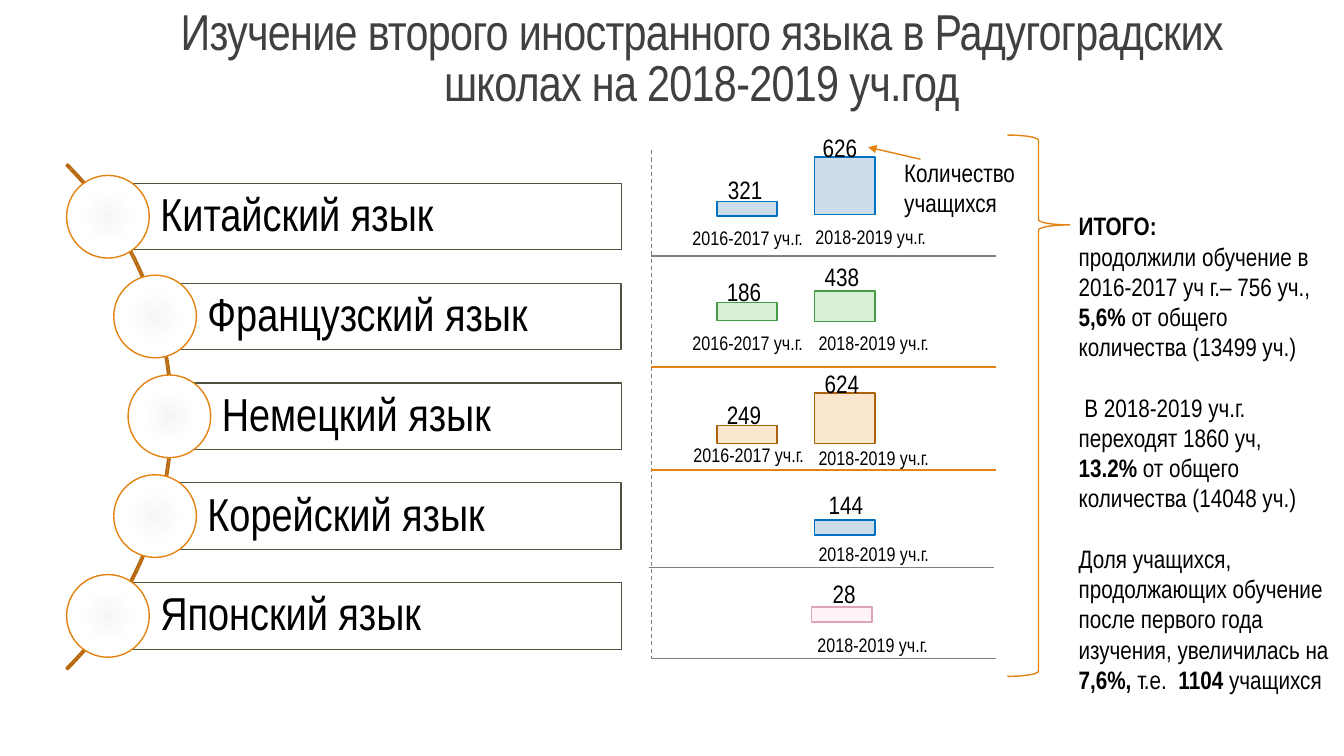
from math import sqrt

from lxml import etree
from pptx import Presentation
from pptx.dml.color import RGBColor
from pptx.enum.dml import MSO_LINE
from pptx.enum.shapes import MSO_CONNECTOR, MSO_SHAPE
from pptx.enum.text import MSO_ANCHOR, PP_ALIGN
from pptx.oxml.ns import qn
from pptx.util import Inches, Pt

RECT, OVAL = MSO_SHAPE.RECTANGLE, MSO_SHAPE.OVAL
ARC, BRACE = MSO_SHAPE.BLOCK_ARC, MSO_SHAPE.RIGHT_BRACE
STRAIGHT, DASH = MSO_CONNECTOR.STRAIGHT, MSO_LINE.DASH
TOP, MIDDLE, BOTTOM = MSO_ANCHOR.TOP, MSO_ANCHOR.MIDDLE, MSO_ANCHOR.BOTTOM
LEFT, CENTER = PP_ALIGN.LEFT, PP_ALIGN.CENTER

FONT = "Arial Narrow"
BLACK = RGBColor(0x00, 0x00, 0x00)
WHITE = RGBColor(0xFF, 0xFF, 0xFF)
TITLE_GRAY = RGBColor(0x40, 0x40, 0x40)
RULE_GRAY = RGBColor(0x80, 0x80, 0x80)
OLIVE = RGBColor(0x4A, 0x54, 0x3E)
ORANGE = RGBColor(0xE4, 0x83, 0x12)
BROWN = RGBColor(0xB7, 0x69, 0x0E)
BLUE_BAR = RGBColor(0xCC, 0xDD, 0xEA), RGBColor(0x00, 0x70, 0xC0)
GREEN_BAR = RGBColor(0xD7, 0xF0, 0xD4), RGBColor(0x43, 0x9B, 0x45)
ORANGE_BAR = RGBColor(0xFB, 0xE6, 0xCE), RGBColor(0xAB, 0x62, 0x0D)
PINK_BAR = RGBColor(0xFF, 0xF3, 0xF7), RGBColor(0xDE, 0xA6, 0xB2)
BUBBLE_STOPS = (0, "F6F6F6"), (45, "FEFEFE"), (100, "FFFFFF")

LANGUAGES = ["Китайский язык", "Французский язык", "Немецкий язык",
             "Корейский язык", "Японский язык"]
MID_Y, ROW_PITCH = 4.13, 0.99
ARC_X, ARC_R, BUBBLE_R = -1.84, 3.52, 0.41
ROW_RIGHT, ROW_H = 6.16, 0.66

FIRST_YEAR, SECOND_YEAR = "2016-2017 уч.г.", "2018-2019 уч.г."
BAR_W = 0.6
CHART_LEFT, CHART_RIGHT = 6.46, 9.88
# year, colours, bar (left, base, height), value, value place, year place
BARS = [
    (FIRST_YEAR, BLUE_BAR, (7.11, 2.14, 0.14), "321", (7.12, 1.68), (6.77, 2.19)),
    (SECOND_YEAR, BLUE_BAR, (8.08, 2.13, 0.57), "626", (8.06, 1.26), (7.99, 2.18)),
    (FIRST_YEAR, GREEN_BAR, (7.11, 3.18, 0.18), "186", (7.11, 2.69), (6.77, 3.23)),
    (SECOND_YEAR, GREEN_BAR, (8.08, 3.19, 0.3), "438", (8.08, 2.54), (8.02, 3.23)),
    (FIRST_YEAR, ORANGE_BAR, (7.11, 4.4, 0.18), "249", (7.11, 3.91), (6.78, 4.34)),
    (SECOND_YEAR, ORANGE_BAR, (8.08, 4.4, 0.5), "624", (8.08, 3.61), (8.02, 4.37)),
    (SECOND_YEAR, BLUE_BAR, (8.08, 5.31, 0.15), "144", (8.12, 4.81), (8.02, 5.33)),
    (SECOND_YEAR, PINK_BAR, (8.05, 6.17, 0.15), "28", (8.16, 5.69), (8.01, 6.23)),
]
# height, shift, colour, width
RULES = [(2.54, 0, RULE_GRAY, 0.75), (3.64, 0, ORANGE, 1),
         (4.66, 0, ORANGE, 1.5), (5.63, -0.02, RULE_GRAY, 0.75),
         (6.53, 0, RULE_GRAY, 0.75)]

# space before, runs (text, bold)
SUMMARY = [
    (0, [("ИТОГО:", True)]),
    (0, [("продолжили обучение в 2016-2017 уч г.– 756 уч.,", False)]),
    (0, [("5,6% ", True), ("от общего количества (13499 уч.)", False)]),
    (21.6, [(" В 2018-2019 уч.г. переходят 1860 уч,", False)]),
    (0, [("13.2%", True), (" от общего количества (14048 уч.)", False)]),
    (21.6, [("Доля учащихся, продолжающих обучение после первого года "
             "изучения, увеличилась на ", False), ("7,6%, ", True),
            ("т.е.  ", False), ("1104 ", True), ("учащихся", False)]),
]


def write(p, text, size=18, color=BLACK, bold=False, align=LEFT,
          line_spacing=None, tracking=None):
    p.alignment = align
    if line_spacing:
        p.line_spacing = line_spacing
    r = p.add_run()
    r.text = text
    r.font.name, r.font.size, r.font.bold = FONT, Pt(size), bold
    r.font.color.rgb = color
    if tracking:
        r.font._element.set("spc", str(tracking))


def add_box(s, x, y, w, h, wrap=True, anchor=TOP):
    tf = s.shapes.add_textbox(*map(Inches, (x, y, w, h))).text_frame
    tf.word_wrap, tf.vertical_anchor = wrap, anchor
    return tf


def add_label(s, text, x, y, w, h, wrap=False, anchor=TOP, **style):
    tf = add_box(s, x, y, w, h, wrap, anchor)
    write(tf.paragraphs[0], text, **style)


def add_shape(s, kind, x, y, w, h, line, width=1.0, fill=None, adjust=()):
    sp = s.shapes.add_shape(kind, *map(Inches, (x, y, w, h)))
    sp.shadow.inherit = False
    sp.line.color.rgb, sp.line.width = line, Pt(width)
    if fill is None:
        sp.fill.background()
    else:
        sp.fill.solid()
        sp.fill.fore_color.rgb = fill
    for i, value in enumerate(adjust):
        sp.adjustments[i] = value
    return sp


def add_line(s, x1, y1, x2, y2, color, width=1.0, dash=None, arrow=False):
    c = s.shapes.add_connector(STRAIGHT, *map(Inches, (x1, y1, x2, y2)))
    c.line.color.rgb, c.line.width = color, Pt(width)
    if dash:
        c.line.dash_style = dash
    if arrow:
        etree.SubElement(c.line._get_or_add_ln(), qn("a:tailEnd"), type="triangle")
    etree.SubElement(c._element.spPr, qn("a:effectLst"))


def fill_radial(sp, stops):
    sp.fill.gradient()
    grad = sp._element.spPr.find(qn("a:gradFill"))
    for child in list(grad):
        grad.remove(child)
    gs_list = etree.SubElement(grad, qn("a:gsLst"))
    for position, color in stops:
        gs = etree.SubElement(gs_list, qn("a:gs"), pos=str(position * 1000))
        etree.SubElement(gs, qn("a:srgbClr"), val=color)
    shade = etree.SubElement(grad, qn("a:path"))
    shade.set("path", "circle")
    etree.SubElement(shade, qn("a:fillToRect"), {side: "50000" for side in "ltrb"})


def add_language(s, name, offset):
    """Place a named row with its bubble, offset in inches from the middle row."""
    x, y = ARC_X + sqrt(ARC_R ** 2 - offset ** 2), MID_Y + offset
    row = add_shape(s, RECT, x, y - ROW_H / 2, ROW_RIGHT - x, ROW_H,
                    OLIVE, 0.75, WHITE)
    tf = row.text_frame
    tf.word_wrap, tf.vertical_anchor = True, MIDDLE
    tf.margin_left = Inches(0.52)
    tf.margin_top = tf.margin_right = tf.margin_bottom = Inches(0.09)
    write(tf.paragraphs[0], name, size=33, line_spacing=0.9)
    bubble = add_shape(s, OVAL, x - BUBBLE_R, y - BUBBLE_R,
                       2 * BUBBLE_R, 2 * BUBBLE_R, ORANGE)
    fill_radial(bubble, BUBBLE_STOPS)


def add_bar(s, year, colors, bar, value, value_at, year_at):
    x, base, h = bar
    fill, line = colors
    add_shape(s, RECT, x, base - h, BAR_W, h, line, 1.25, fill)
    add_label(s, value, *value_at, 0.55, 0.4)
    add_label(s, year, *year_at, 1.33, 0.34, size=14)


def add_summary(s):
    tf = add_box(s, 10.6, 2.04, 2.72, 4.95)
    for i, (space, runs) in enumerate(SUMMARY):
        p = tf.add_paragraph() if i else tf.paragraphs[0]
        p.space_before = Pt(space)
        for text, bold in runs:
            write(p, text, bold=bold)


def main():
    prs = Presentation()
    prs.slide_width, prs.slide_height = Inches(13.33), Inches(7.5)
    s = prs.slides.add_slide(prs.slide_layouts[6])

    add_label(s, "Изучение второго иностранного языка в Радугоградских "
              "школах на 2018-2019 уч.год", 1.46, 0.3, 11, 0.86, wrap=True,
              anchor=BOTTOM, size=36, color=TITLE_GRAY, align=CENTER,
              line_spacing=0.85, tracking=-50)

    add_shape(s, ARC, -5.38, 0.59, 7.09, 7.09, BROWN, 1.25, adjust=(189, 27, 0.003))
    for i, name in enumerate(LANGUAGES):
        add_language(s, name, (i - len(LANGUAGES) // 2) * ROW_PITCH)

    add_line(s, CHART_LEFT, 1.49, CHART_LEFT, 6.53, RULE_GRAY, 0.75, dash=DASH)
    for y, shift, color, width in RULES:
        add_line(s, CHART_LEFT + shift, y, CHART_RIGHT + shift, y, color, width)
    for bar in BARS:
        add_bar(s, *bar)
    add_label(s, "Количество учащихся", 8.87, 1.51, 1.43, 0.71, wrap=True)
    add_line(s, 9.13, 1.58, 8.61, 1.46, ORANGE, arrow=True)

    add_shape(s, BRACE, 9.99, 1.34, 0.62, 5.37, ORANGE, adjust=(0.083, 0.166))
    add_summary(s)
    prs.save("out.pptx")


if __name__ == "__main__":
    main()
